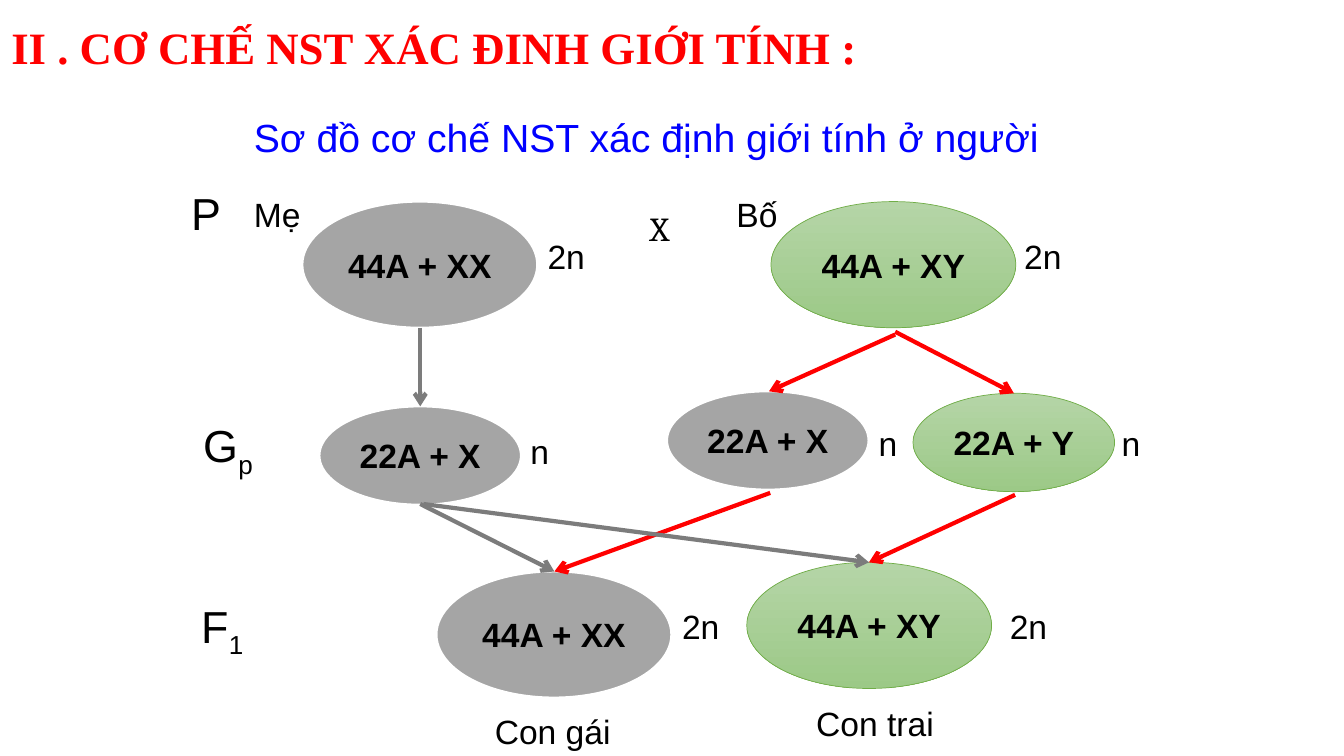
from lxml import etree
from pptx import Presentation
from pptx.dml.color import RGBColor
from pptx.enum.shapes import MSO_CONNECTOR, MSO_SHAPE
from pptx.enum.text import MSO_ANCHOR, MSO_AUTO_SIZE, PP_ALIGN
from pptx.oxml.ns import qn
from pptx.util import Cm, Pt

BLACK = RGBColor(0x00, 0x00, 0x00)
WHITE = RGBColor(0xFF, 0xFF, 0xFF)
RED = RGBColor(0xFF, 0x00, 0x00)
BLUE = RGBColor(0x00, 0x00, 0xFF)
GRAY = RGBColor(0xA5, 0xA5, 0xA5)
DARK_GRAY = RGBColor(0x7C, 0x7C, 0x7C)
GREEN = RGBColor(0x70, 0xAD, 0x47)
GREEN_TOP = RGBColor(0xB5, 0xD5, 0xA7)
GREEN_BOTTOM = RGBColor(0x9C, 0xC9, 0x87)


class Diagram:
    font = "Arial"
    label_size = 24
    arrow_width = 3

    def __init__(self, deck):
        self.slide = deck.slides.add_slide(deck.slide_layouts[5])

    def style(self, paragraph, size, color=BLACK, font=None, bold=False):
        for run in paragraph.runs:
            run.font.name = font or self.font
            run.font.size = Pt(size)
            run.font.bold = bold
            run.font.color.rgb = color

    def title(self, text, left, top, width, height):
        heading = self.slide.shapes.title
        heading.left, heading.top = Cm(left), Cm(top)
        heading.width, heading.height = Cm(width), Cm(height)
        frame = heading.text_frame
        frame.text = text
        frame.word_wrap = False
        frame.auto_size = MSO_AUTO_SIZE.NONE
        frame.vertical_anchor = MSO_ANCHOR.TOP
        frame.paragraphs[0].alignment = PP_ALIGN.LEFT
        self.style(frame.paragraphs[0], 32, RED, "Times New Roman", True)

    def label(self, text, left, top, width=2.11, height=1.27, size=None,
              color=BLACK, font=None, subscript=""):
        box = self.slide.shapes.add_textbox(Cm(left), Cm(top), Cm(width), Cm(height))
        frame = box.text_frame
        frame.word_wrap = True
        frame.text = text
        paragraph = frame.paragraphs[0]
        if subscript:
            index = paragraph.add_run()
            index.text = subscript
            index._r.get_or_add_rPr().set("baseline", "-25000")
        self.style(paragraph, size or self.label_size, color, font)

    def cell(self, text, left, top, width, height, male=False):
        oval = self.slide.shapes.add_shape(
            MSO_SHAPE.OVAL, Cm(left), Cm(top), Cm(width), Cm(height))
        oval.shadow.inherit = False
        if male:
            oval.fill.gradient()
            oval.fill.gradient_angle = 270
            for stop, color in zip(oval.fill.gradient_stops, (GREEN_TOP, GREEN_BOTTOM)):
                stop.color.rgb = color
        else:
            oval.fill.solid()
            oval.fill.fore_color.rgb = GRAY
        oval.line.color.rgb = GREEN if male else WHITE
        oval.line.width = Pt(0.5 if male else 1.5)
        frame = oval.text_frame
        frame.text = text
        frame.vertical_anchor = MSO_ANCHOR.MIDDLE
        frame.paragraphs[0].alignment = PP_ALIGN.CENTER
        self.style(frame.paragraphs[0], self.label_size, bold=True)

    def arrow(self, start, end, color):
        link = self.slide.shapes.add_connector(
            MSO_CONNECTOR.STRAIGHT, *map(Cm, start), *map(Cm, end))
        link.line.color.rgb = color
        link.line.width = Pt(self.arrow_width)
        etree.SubElement(link.line._get_or_add_ln(), qn("a:tailEnd"), type="arrow")
        etree.SubElement(link._element.spPr, qn("a:effectLst"))


def main():
    deck = Presentation()
    deck.slide_width, deck.slide_height = Cm(33.87), Cm(19.05)
    diagram = Diagram(deck)

    diagram.title("II . CƠ CHẾ NST XÁC ĐINH GIỚI TÍNH :", 0.03, 0.38, 22.02, 1.62)
    diagram.label("Sơ đồ cơ chế NST xác định giới tính ở người",
                  6.15, 2.74, 22.02, 1.45, size=28, color=BLUE)

    mother_size, father_size, gamete_size = (5.92, 3.18), (6.17, 3.18), (5.08, 2.48)
    for text, left, top, size, male in (
        ("44A + XX", 7.62, 5.08, mother_size, False),
        ("44A + XY", 19.43, 5.08, father_size, True),
        ("22A + X", 8.05, 10.24, gamete_size, False),
        ("22A + Y", 23.01, 9.91, gamete_size, True),
        ("22A + X", 16.81, 9.86, gamete_size, False),
        ("44A + XX", 11.0, 14.4, mother_size, False),
        ("44A + XY", 18.82, 14.17, father_size, True),
    ):
        diagram.cell(text, left, top, *size, male=male)

    for text, left, top in (
        ("Mẹ", 6.15, 4.75), ("Bố", 18.31, 4.75),
        ("2n", 13.55, 5.82), ("2n", 25.56, 5.82),
        ("n", 13.12, 10.74), ("n", 21.89, 10.52), ("n", 28.02, 10.52),
        ("2n", 16.94, 15.14), ("2n", 25.2, 15.14),
    ):
        diagram.label(text, left, top)
    for child, left, top in (("Con gái", 12.22, 17.78), ("Con trai", 20.32, 17.58)):
        diagram.label(child, left, top, 3.91)
    for generation, subscript, left, top, width in (
        ("P", "", 4.57, 4.55, 1.55),
        ("G", "p", 4.88, 10.41, 3.91),
        ("F", "1", 4.83, 14.96, 3.91),
    ):
        diagram.label(generation, left, top, width, 1.63, size=32, subscript=subscript)

    daughter, son = (13.97, 14.4), (21.9, 14.17)
    for start, end, color in (
        ((10.59, 8.26), (10.59, 10.24), DARK_GRAY),
        ((22.56, 8.43), (19.38, 9.86), RED),
        ((22.56, 8.36), (25.55, 9.91), RED),
        ((10.59, 12.7), daughter, DARK_GRAY),
        ((19.41, 12.42), daughter, RED),
        ((10.67, 12.7), son, DARK_GRAY),
        ((25.58, 12.47), son, RED),
    ):
        diagram.arrow(start, end, color)
    diagram.label("X", 16.13, 5.11, 1.12, font="Cambria")

    deck.save("out.pptx")


if __name__ == "__main__":
    main()
